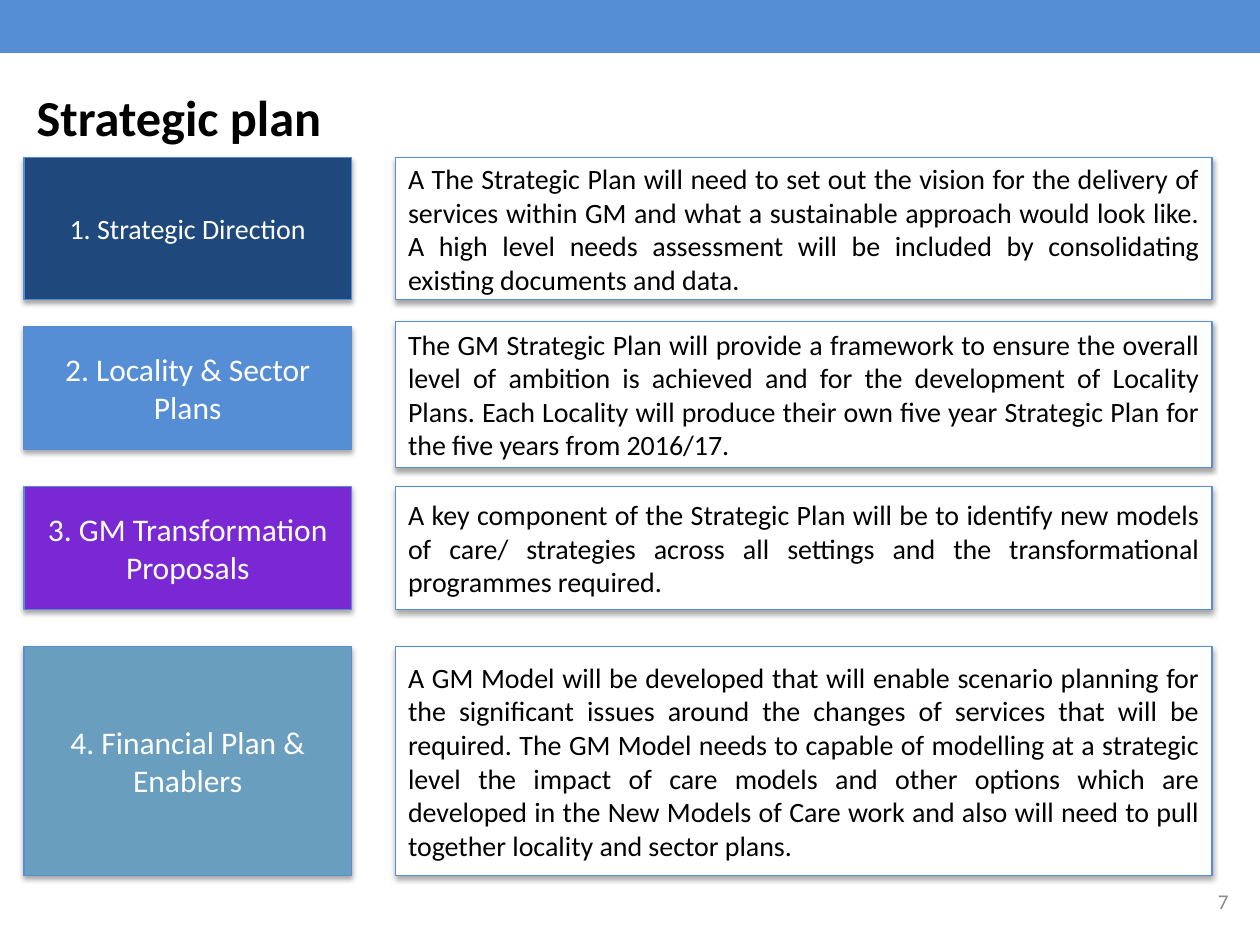
from dataclasses import dataclass

from lxml import etree
from pptx import Presentation, util as u
from pptx.dml.color import RGBColor
from pptx.enum import shapes, text
from pptx.oxml import parse_xml
from pptx.oxml.ns import nsdecls

WIDTH, HEIGHT = 10, 7.5
BLUE, WHITE, BLACK, GREY = "558ED5", "FFFFFF", "000000", "8C8C8C"
ALIGN = text.PP_ALIGN

# Columns as (left, width) shares of the slide width
LABEL_COLUMN = (0.019, 0.26)
DETAIL_COLUMN = (0.314, 0.648)


@dataclass
class Band:
    """Vertical extent in inches."""
    top: float
    height: float


@dataclass
class Stage:
    label: str
    detail: str
    color: str
    label_band: Band
    detail_band: Band
    label_size: int = 18


STAGES = [
    Stage("1. Strategic Direction",
          "A The Strategic Plan will need to set out the vision for the delivery of "
          "services within GM and what a sustainable approach would look like. "
          "A high level needs assessment will be included by consolidating "
          "existing documents and data.",
          "1F497D", Band(1.25, 1.13), Band(1.25, 1.13), 16),
    Stage("2. Locality & Sector Plans",
          "The GM Strategic Plan will provide a framework to ensure the overall "
          "level of ambition is achieved and for the development of Locality "
          "Plans. Each Locality will produce their own five year Strategic Plan "
          "for the five years from 2016/17.",
          BLUE, Band(2.59, 0.98), Band(2.55, 1.16)),
    Stage("3. GM Transformation Proposals",
          "A key component of the Strategic Plan will be to identify new models "
          "of care/ strategies across all settings and the transformational "
          "programmes required.",
          "7A28D4", Band(3.86, 0.98), Band(3.86, 0.98)),
    Stage("4. Financial Plan & Enablers",
          "A GM Model will be developed that will enable scenario planning for "
          "the significant issues around the changes of services that will be "
          "required. The GM Model needs to capable of modelling at a strategic "
          "level the impact of care models and other options which are "
          "developed in the New Models of Care work and also will need to pull "
          "together locality and sector plans.",
          "6A9EBE", Band(5.13, 1.82), Band(5.13, 1.82)),
]


def rgb(value: str) -> RGBColor:
    return RGBColor.from_string(value)


def area(column: tuple, band: Band) -> list:
    left, width = column
    return [u.Inches(n) for n in (left * WIDTH, band.top, width * WIDTH, band.height)]


def write(box, words: str, size: float, color: str, align, bold: bool = False,
          anchor=text.MSO_ANCHOR.MIDDLE) -> None:
    frame = box.text_frame
    frame.word_wrap = True
    frame.auto_size = text.MSO_AUTO_SIZE.NONE
    frame.vertical_anchor = anchor
    para = frame.paragraphs[0]
    para.alignment = align
    span = para.add_run()
    span.text = words
    formats = {"name": "Calibri", "size": u.Pt(size), "bold": bold}
    for name, value in formats.items():
        setattr(span.font, name, value)
    span.font.color.rgb = rgb(color)


def add_rectangle(page, column: tuple, band: Band, fill: str):
    box = page.shapes.add_shape(shapes.MSO_SHAPE.RECTANGLE, *area(column, band))
    box.shadow.inherit = False
    box.fill.solid()
    box.fill.fore_color.rgb = rgb(fill)
    box.line.fill.background()
    return box


def add_card(page, column: tuple, band: Band, fill: str, words: str,
             size: int, color: str, align) -> None:
    box = add_rectangle(page, column, band, fill)
    box.line.color.rgb = rgb(BLUE)
    box.line.width = u.Pt(0.75)
    write(box, words, size, color, align)
    # Soft shadow straight below the card
    effects = box._element.spPr.find("{*}effectLst")
    effects.append(parse_xml(
        f'<a:outerShdw {nsdecls("a")} blurRad="{u.Pt(3.1)}" dist="{u.Pt(1.8)}" '
        'dir="5400000" rotWithShape="0"><a:srgbClr val="000000">'
        '<a:alpha val="35000"/></a:srgbClr></a:outerShdw>'))


def main() -> None:
    deck = Presentation()
    deck.slide_width, deck.slide_height = u.Inches(WIDTH), u.Inches(HEIGHT)
    page = deck.slides.add_slide(deck.slide_layouts[5])

    # Top band
    add_rectangle(page, (0, 1), Band(-0.01, 0.43), BLUE)

    # Title, set below the band
    title = page.shapes.title
    places = area((0.019, 0.966), Band(0.14, 0.83))
    for name, value in zip(("left", "top", "width", "height"), places):
        setattr(title, name, value)
    title.text_frame.margin_top = u.Inches(0.54)
    title.text_frame.margin_bottom = 0
    write(title, "Strategic plan", 28.8, BLACK, ALIGN.LEFT, True, text.MSO_ANCHOR.TOP)

    # Stages: coloured label and description
    for stage in STAGES:
        add_card(page, LABEL_COLUMN, stage.label_band, stage.color,
                 stage.label, stage.label_size, WHITE, ALIGN.CENTER)
        add_card(page, DETAIL_COLUMN, stage.detail_band, WHITE,
                 stage.detail, 16, BLACK, ALIGN.JUSTIFY)

    # Page number
    number = page.shapes.add_textbox(*area((0.752, 0.233), Band(6.95, 0.4)))
    write(number, "7", 12, GREY, ALIGN.RIGHT)

    deck.save("out.pptx")


if __name__ == "__main__":
    main()
